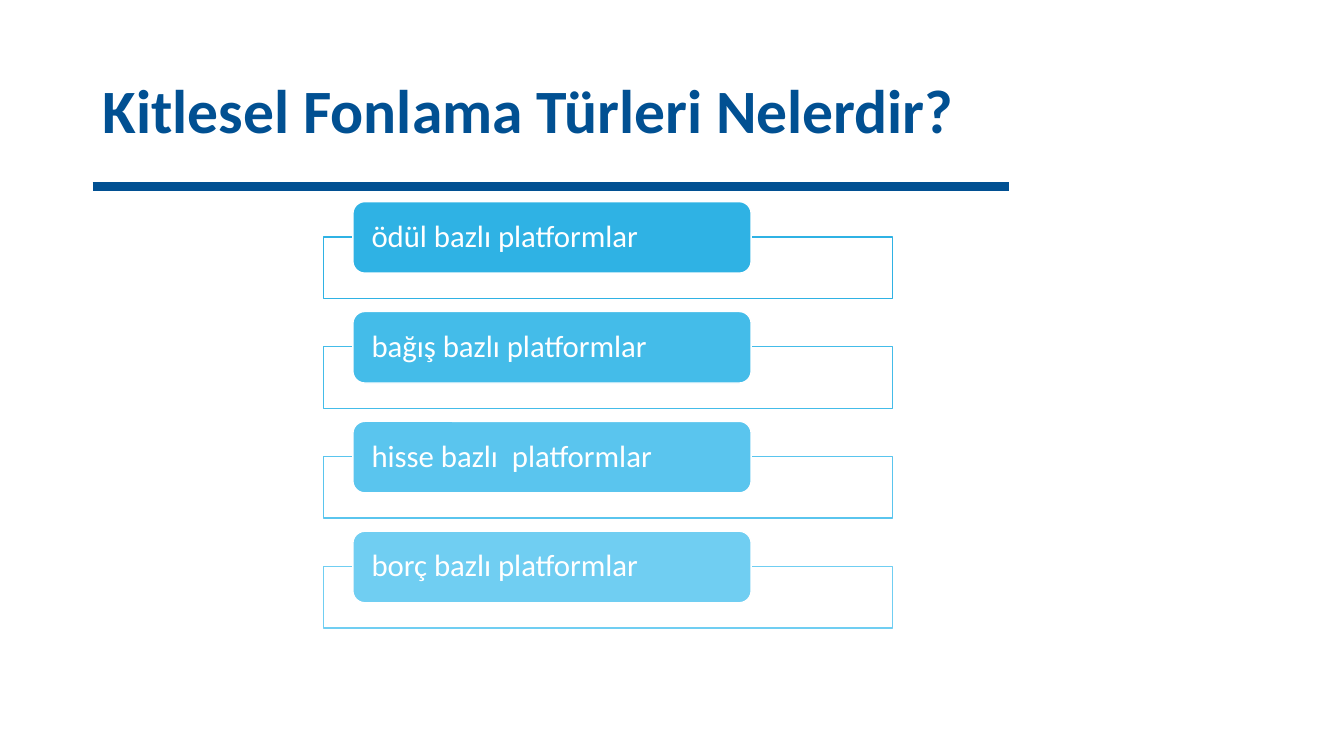
from lxml.etree import SubElement
from pptx import Presentation
from pptx.dml.color import RGBColor
from pptx.enum.shapes import MSO_CONNECTOR, MSO_SHAPE
from pptx.enum.text import MSO_ANCHOR, PP_ALIGN
from pptx.oxml.ns import qn
from pptx.util import Inches, Pt

NAVY = RGBColor(0x01, 0x50, 0x92)
WHITE = RGBColor(0xFF, 0xFF, 0xFF)
PLATFORMS = [
    ("ödül bazlı platformlar", RGBColor(0x2F, 0xB2, 0xE4)),
    ("bağış bazlı platformlar", RGBColor(0x44, 0xBC, 0xE9)),
    ("hisse bazlı  platformlar", RGBColor(0x5A, 0xC5, 0xEE)),
    ("borç bazlı platformlar", RGBColor(0x70, 0xCE, 0xF2)),
]
FIRST_TOP = 2.0
ROW_STEP = 1.09


def add_box(preset, left, top, width, height, fill, outline):
    box = slide.shapes.add_shape(
        preset, Inches(left), Inches(top), Inches(width), Inches(height))
    box.shadow.inherit = False
    box.fill.solid()
    box.fill.fore_color.rgb = fill
    box.line.color.rgb = outline
    box.line.width = Pt(1)
    return box


def write_text(shape, text, size, color, bold=False):
    frame = shape.text_frame
    frame.word_wrap = True
    frame.vertical_anchor = MSO_ANCHOR.MIDDLE
    frame.text = text
    paragraph = frame.paragraphs[0]
    paragraph.alignment = PP_ALIGN.LEFT
    paragraph.line_spacing = 0.9
    font = paragraph.runs[0].font
    font.name = "Calibri"
    font.size = Pt(size)
    font.bold = bold
    font.color.rgb = color


prs = Presentation()
prs.slide_width = Inches(13.33)
prs.slide_height = Inches(7.5)
slide = prs.slides.add_slide(prs.slide_layouts[6])

title_rule = slide.shapes.add_connector(
    MSO_CONNECTOR.STRAIGHT, Inches(0.92), Inches(1.85), Inches(10.01), Inches(1.85))
title_rule.line.color.rgb = NAVY
title_rule.line.width = Pt(6)
SubElement(title_rule._element.spPr, qn("a:effectLst"))

title = slide.shapes.add_textbox(Inches(0.92), Inches(0.4), Inches(9.1), Inches(1.45))
write_text(title, "Kitlesel Fonlama Türleri Nelerdir?", 44, NAVY, bold=True)

for row, (platform, color) in enumerate(PLATFORMS):
    top = FIRST_TOP + row * ROW_STEP
    add_box(MSO_SHAPE.RECTANGLE, 3.21, top + 0.35, 5.64, 0.61, WHITE, color)
    label = add_box(MSO_SHAPE.ROUNDED_RECTANGLE, 3.5, top, 3.95, 0.71, color, WHITE)
    label.text_frame.margin_left = label.text_frame.margin_right = Inches(0.15)
    label.text_frame.margin_top = label.text_frame.margin_bottom = 0
    write_text(label, platform, 22, WHITE)

prs.save("out.pptx")
